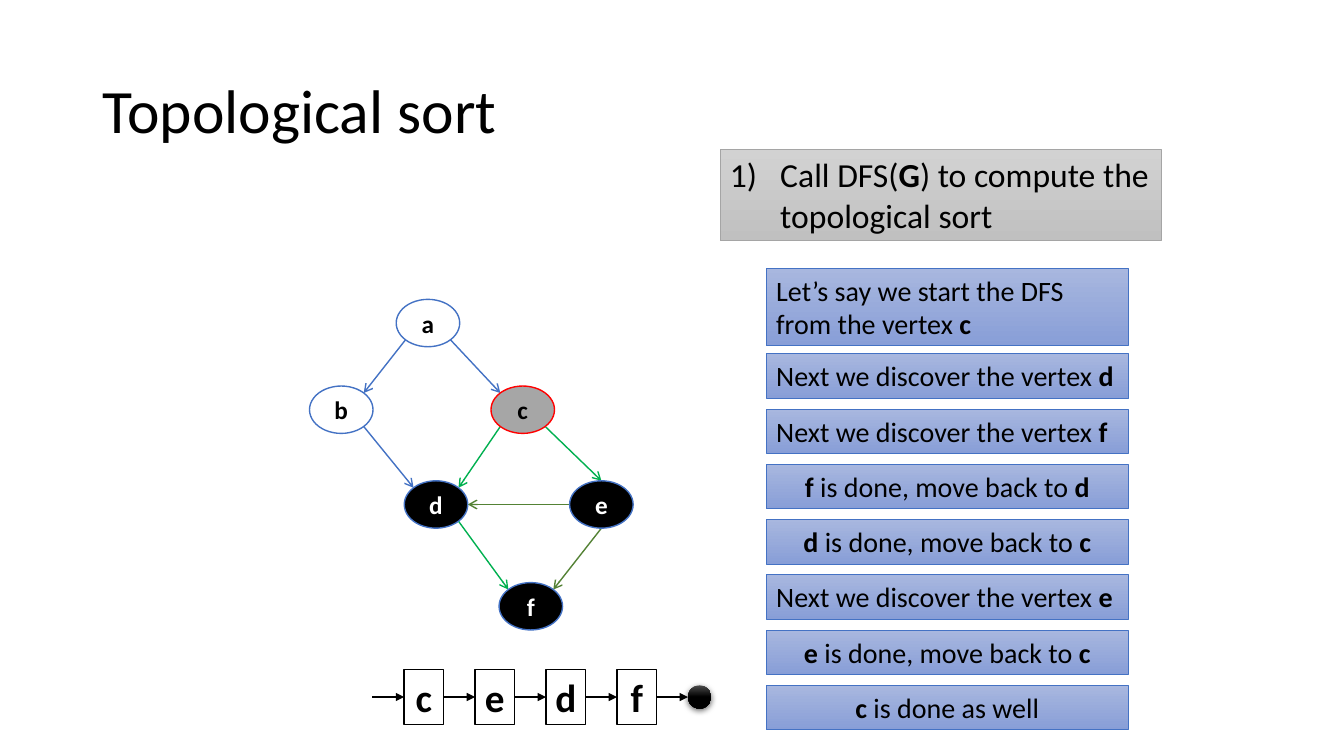
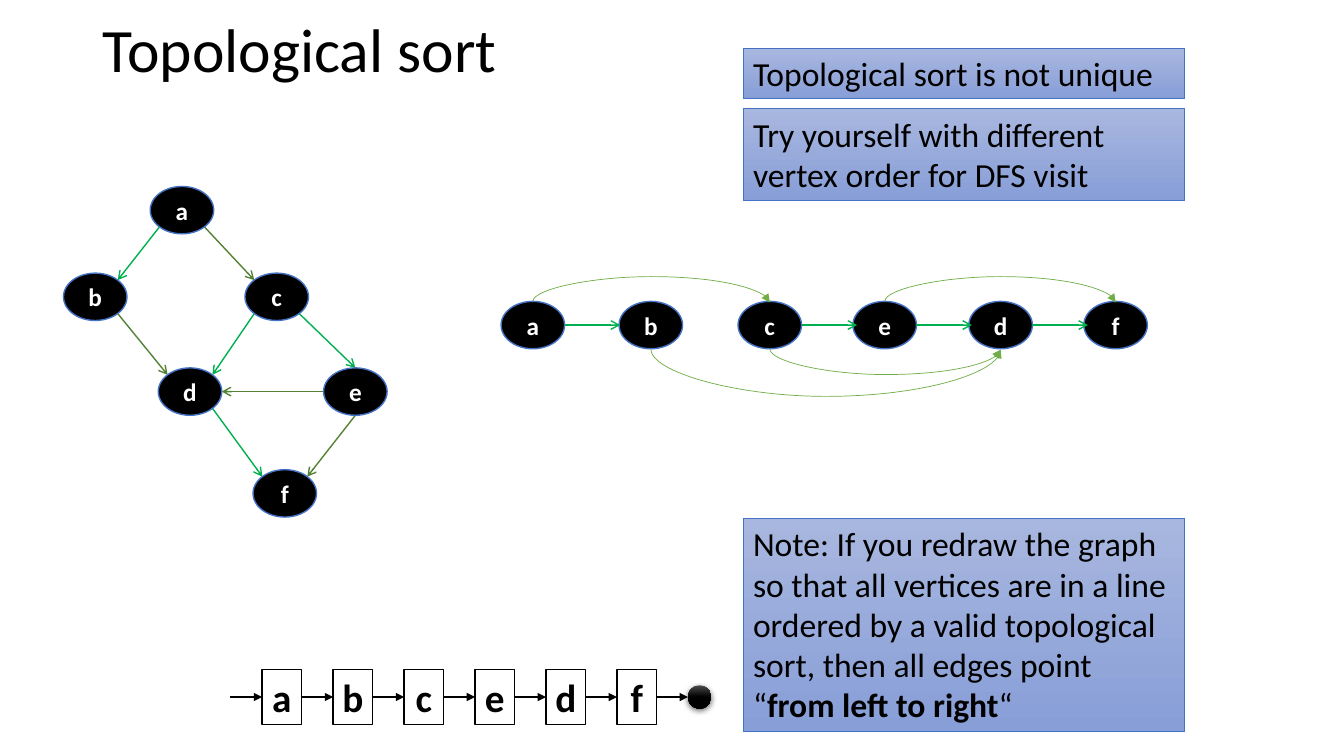
from dataclasses import dataclass
from math import hypot
from typing import NamedTuple

from lxml.etree import SubElement
from pptx import Presentation
from pptx.dml.color import RGBColor
from pptx.enum.shapes import MSO_CONNECTOR as Link, MSO_SHAPE as Preset
from pptx.enum.text import MSO_ANCHOR as Anchor, MSO_AUTO_SIZE as AutoSize, PP_ALIGN as Align
from pptx.oxml.ns import qn
from pptx.util import Inches, Pt

BLACK = RGBColor(0x00, 0x00, 0x00)
WHITE = RGBColor(0xFF, 0xFF, 0xFF)
BLUE = RGBColor(0x44, 0x72, 0xC4)
RED = RGBColor(0xFF, 0x00, 0x00)
MID_GREY = RGBColor(0xA6, 0xA6, 0xA6)
BORDER_GREY = RGBColor(0xA5, 0xA5, 0xA5)
TREE_GREEN = RGBColor(0x00, 0xB0, 0x50)
DARK_GREEN = RGBColor(0x54, 0x82, 0x35)
ARC_GREEN = RGBColor(0x70, 0xAD, 0x47)
BLUE_FADE = (RGBColor(0xA8, 0xB7, 0xDF), RGBColor(0x88, 0x9E, 0xD7))
GREY_FADE = (RGBColor(0xD2, 0xD2, 0xD2), RGBColor(0xC0, 0xC0, 0xC0))
BALL_FADE = (RGBColor(0x4B, 0x4B, 0x4B), BLACK)

FONT = "Calibri"
VERTEX_W, VERTEX_H = 0.63, 0.47
CELL_W, CELL_H, CELL_TOP = 0.39, 0.55, 6.64
FIRST_CELL, LAST_CELL = 2.6, 6.12
CELL_PITCH = (LAST_CELL - FIRST_CELL) / 5
BALL = 0.23
ARROW = LAST_CELL - FIRST_CELL - 4 * CELL_PITCH - CELL_W
ROW_TOP, ROW_ARROW = 2.99, 0.55
ARC_RISE = 0.01


class Run(NamedTuple):
    text: str
    bold: bool = False


class Point(NamedTuple):
    x: float
    y: float


class Edge(NamedTuple):
    start: str
    start_side: Point
    end: str
    end_side: Point
    color: RGBColor


class Arc(NamedTuple):
    start: str
    end: str
    depth: float


class VertexLook(NamedTuple):
    fill: RGBColor
    border: RGBColor
    ink: RGBColor


@dataclass
class Note:
    left: float
    top: float
    width: float
    height: float
    runs: list[Run]
    size: int = 20
    align: Align = Align.LEFT
    fade: tuple[RGBColor, RGBColor] = BLUE_FADE
    border: RGBColor = BLUE
    numbered: bool = False


OPEN = VertexLook(WHITE, BLUE, BLACK)
ACTIVE = VertexLook(MID_GREY, RED, BLACK)
DONE = VertexLook(BLACK, BLUE, WHITE)

TOP, BOTTOM, LEFT, RIGHT = Point(0, -1), Point(0, 1), Point(-1, 0), Point(1, 0)
TOP_LEFT, TOP_RIGHT = Point(-1, -1), Point(1, -1)
BOTTOM_LEFT, BOTTOM_RIGHT = Point(-1, 1), Point(1, 1)

GRAPH = {
    "a": Point(3.93, 2.97), "b": Point(3.07, 3.83), "c": Point(4.87, 3.83),
    "d": Point(4.01, 4.77), "e": Point(5.65, 4.77), "f": Point(4.95, 5.78),
}
EDGES = [
    Edge("a", BOTTOM_LEFT, "b", TOP_RIGHT, TREE_GREEN),
    Edge("a", BOTTOM_RIGHT, "c", TOP_LEFT, DARK_GREEN),
    Edge("b", BOTTOM_RIGHT, "d", TOP_LEFT, DARK_GREEN),
    Edge("c", BOTTOM_LEFT, "d", TOP_RIGHT, TREE_GREEN),
    Edge("c", BOTTOM_RIGHT, "e", TOP, TREE_GREEN),
    Edge("e", LEFT, "d", RIGHT, DARK_GREEN),
    Edge("d", BOTTOM_RIGHT, "f", TOP_LEFT, TREE_GREEN),
    Edge("e", BOTTOM, "f", TOP_RIGHT, DARK_GREEN),
]
ROW = {name: Point(left, ROW_TOP) for name, left in
       zip("abcedf", (4.97, 6.14, 7.32, 8.46, 9.61, 10.75))}
ARCS = [Arc("a", "c", -0.25), Arc("e", "f", -0.25),
        Arc("c", "d", 0.26), Arc("b", "d", 0.48)]


def discover(vertex: str) -> tuple[list[Run], Align]:
    return [Run("Next we discover the vertex "), Run(vertex, True)], Align.LEFT


def finish(vertex: str, parent: str) -> tuple[list[Run], Align]:
    return [Run(f"{vertex} ", True), Run("is done, move back to "), Run(parent, True)], Align.CENTER


STEPS = [discover("d"), discover("f"), finish("f", "d"), finish("d", "c"),
         discover("e"), finish("e", "c"),
         ([Run("c ", True), Run("is done as well")], Align.CENTER)]
STEP_TOP, LAST_STEP_TOP = 3.51, 6.8
STEP_PITCH = (LAST_STEP_TOP - STEP_TOP) / (len(STEPS) - 1)

SEARCH_NOTES = [
    Note(7.14, 1.48, 4.38, 0.91,
         [Run("Call DFS("), Run("G", True), Run(") to compute the topological sort")],
         24, fade=GREY_FADE, border=BORDER_GREY, numbered=True),
    Note(7.6, 2.66, 3.59, 0.77,
         [Run("Let’s say we start the DFS from the vertex "), Run("c", True)]),
] + [Note(7.6, STEP_TOP + index * STEP_PITCH, 3.59, 0.44, runs, align=align)
     for index, (runs, align) in enumerate(STEPS)]

ORDER_NOTES = [
    Note(7.37, 0.48, 4.38, 0.5, [Run("Topological sort is not unique")], 24),
    Note(7.37, 1.08, 4.38, 0.91,
         [Run("Try yourself with different vertex order for DFS visit")], 24),
    Note(7.37, 5.14, 4.38, 2.12,
         [Run("Note: If you redraw the graph so that all vertices are in a line "
              "ordered by a valid topological sort, then all edges point “"),
          Run("from left to right", True), Run("“")], 24),
]


def add_runs(paragraph, runs: list[Run], size: int, color: RGBColor) -> None:
    for part in runs:
        run = paragraph.add_run()
        run.text = part.text
        run.font.name = FONT
        run.font.size = Pt(size)
        run.font.bold = part.bold
        run.font.color.rgb = color


def add_title_slide(deck, top: float, height: float):
    slide = deck.slides.add_slide(deck.slide_layouts[5])
    title = slide.shapes.title
    title.left, title.top = Inches(0.92), Inches(top)
    title.width, title.height = Inches(11.5), Inches(height)
    frame = title.text_frame
    frame.word_wrap = True
    frame.auto_size = AutoSize.NONE
    frame.vertical_anchor = Anchor.MIDDLE
    paragraph = frame.paragraphs[0]
    paragraph.alignment = Align.LEFT
    paragraph.line_spacing = 0.9
    add_runs(paragraph, [Run("Topological sort")], 44, BLACK)
    return slide


def add_block(slide, preset: Preset, left: float, top: float, width: float, height: float):
    block = slide.shapes.add_shape(preset, Inches(left), Inches(top), Inches(width), Inches(height))
    block.shadow.inherit = False
    return block


def fade_fill(block, fade: tuple[RGBColor, RGBColor], end: float = 1) -> None:
    block.fill.gradient()
    block.fill.gradient_angle = 270
    for stop, color, position in zip(block.fill.gradient_stops, fade, (0, end)):
        stop.color.rgb = color
        stop.position = position


def add_note(slide, note: Note) -> None:
    box = add_block(slide, Preset.RECTANGLE, note.left, note.top, note.width, note.height)
    fade_fill(box, note.fade)
    box.line.color.rgb = note.border
    box.line.width = Pt(0.5)
    frame = box.text_frame
    frame.word_wrap = True
    frame.auto_size = AutoSize.SHAPE_TO_FIT_TEXT
    frame.vertical_anchor = Anchor.TOP
    paragraph = frame.paragraphs[0]
    paragraph.alignment = note.align
    if note.numbered:
        properties = paragraph._p.get_or_add_pPr()
        properties.set("marL", str(Inches(0.5)))
        properties.set("indent", str(-Inches(0.5)))
        SubElement(properties, qn("a:buFont")).set("typeface", "+mj-lt")
        SubElement(properties, qn("a:buAutoNum")).set("type", "arabicParenR")
    add_runs(paragraph, note.runs, note.size, BLACK)


def add_letter(slide, preset: Preset, letter: str, corner: Point, width: float, height: float,
               look: VertexLook, size: int):
    block = add_block(slide, preset, corner.x, corner.y, width, height)
    block.fill.solid()
    block.fill.fore_color.rgb = look.fill
    block.line.color.rgb = look.border
    block.line.width = Pt(1)
    frame = block.text_frame
    frame.word_wrap = True
    frame.margin_left = frame.margin_right = Inches(0)
    frame.vertical_anchor = Anchor.MIDDLE
    frame.paragraphs[0].alignment = Align.CENTER
    add_runs(frame.paragraphs[0], [Run(letter, True)], size, look.ink)
    return block


def add_vertex(slide, letter: str, corner: Point, look: VertexLook) -> None:
    add_letter(slide, Preset.OVAL, letter, corner, VERTEX_W, VERTEX_H, look, 18)


def add_arrow(slide, start: Point, end: Point, color: RGBColor, head: str = "arrow",
              kind: Link = Link.STRAIGHT, width: float = 1):
    arrow = slide.shapes.add_connector(kind, Inches(start.x), Inches(start.y),
                                       Inches(end.x), Inches(end.y))
    arrow.line.color.rgb = color
    arrow.line.width = Pt(width)
    SubElement(arrow.line._get_or_add_ln(), qn("a:tailEnd")).set("type", head)
    SubElement(arrow._element.spPr, qn("a:effectLst"))
    return arrow


def rim(corner: Point, side: Point) -> Point:
    reach = 2 * hypot(side.x, side.y)
    return Point(corner.x + VERTEX_W * (0.5 + side.x / reach),
                 corner.y + VERTEX_H * (0.5 + side.y / reach))


def add_graph(slide, shift: Point, looks: dict[str, VertexLook],
              pending: tuple[str, ...] = ()) -> None:
    corners = {name: Point(p.x + shift.x, p.y + shift.y) for name, p in GRAPH.items()}
    for edge in EDGES:
        add_arrow(slide, rim(corners[edge.start], edge.start_side),
                  rim(corners[edge.end], edge.end_side),
                  BLUE if edge.start + edge.end in pending else edge.color)
    for name, corner in corners.items():
        add_vertex(slide, name, corner, looks.get(name, DONE))


def add_queue(slide, letters: str) -> None:
    middle = CELL_TOP + CELL_H / 2
    first = LAST_CELL - (len(letters) - 1) * CELL_PITCH
    previous = None
    for index, letter in enumerate(letters):
        left = first + index * CELL_PITCH
        cell = add_letter(slide, Preset.RECTANGLE, letter, Point(left, CELL_TOP), CELL_W, CELL_H,
                          VertexLook(WHITE, BLACK, BLACK), 28)
        arrow = add_arrow(slide, Point(left - ARROW, middle), Point(left, middle), BLACK, "triangle")
        if previous is not None:
            arrow.begin_connect(previous, 3)
        arrow.end_connect(cell, 1)
        previous = cell
    ball_left = LAST_CELL + CELL_PITCH
    final = add_arrow(slide, Point(LAST_CELL + CELL_W, middle), Point(ball_left, middle),
                      BLACK, "triangle")
    final.begin_connect(previous, 3)
    ball = add_block(slide, Preset.OVAL, ball_left, middle - BALL / 2, BALL, BALL)
    fade_fill(ball, BALL_FADE, 0.5)
    ball.line.fill.background()
    shadow = SubElement(ball._element.spPr.find(qn("a:effectLst")), qn("a:outerShdw"),
                        blurRad=str(Pt(4.5)), dist=str(Pt(1.5)), dir="5400000", rotWithShape="0")
    shade = SubElement(shadow, qn("a:srgbClr"), val=str(BLACK))
    SubElement(shade, qn("a:alpha"), val="63000")


def add_arc(slide, arc: Arc) -> None:
    side = TOP if arc.depth < 0 else BOTTOM
    start, end = rim(ROW[arc.start], side), rim(ROW[arc.end], side)
    center_x, center_y = (start.x + end.x) / 2, start.y + ARC_RISE / 2
    half = (end.x - start.x) / 2
    curve = add_arrow(slide, Point(center_x + ARC_RISE / 2, center_y - half),
                      Point(center_x - ARC_RISE / 2, center_y + half),
                      ARC_GREEN, "triangle", Link.CURVE, 0.5)
    properties = curve._element.spPr
    properties.find(qn("a:xfrm")).set("rot", "16200000")
    guides = properties.find(qn("a:prstGeom")).find(qn("a:avLst"))
    SubElement(guides, qn("a:gd"), name="adj1", fmla=f"val {round(arc.depth / ARC_RISE * 100000)}")


def add_row(slide) -> None:
    for name, corner in ROW.items():
        add_vertex(slide, name, corner, DONE)
    for name in "aced":
        start = rim(ROW[name], RIGHT)
        add_arrow(slide, start, Point(start.x + ROW_ARROW, start.y), TREE_GREEN)
    for arc in ARCS:
        add_arc(slide, arc)


def main() -> None:
    deck = Presentation()
    deck.slide_width, deck.slide_height = Inches(13.33), Inches(7.5)

    search = add_title_slide(deck, 0.4, 1.45)
    add_graph(search, Point(0, 0), {"a": OPEN, "b": OPEN, "c": ACTIVE}, ("ab", "ac", "bd"))
    add_queue(search, "cedf")
    for note in SEARCH_NOTES:
        add_note(search, note)

    order = add_title_slide(deck, 0.07, 0.91)
    add_graph(order, Point(-2.44, -1.12), {})
    add_queue(order, "abcedf")
    for note in ORDER_NOTES:
        add_note(order, note)
    add_row(order)

    deck.save("out.pptx")


if __name__ == "__main__":
    main()
